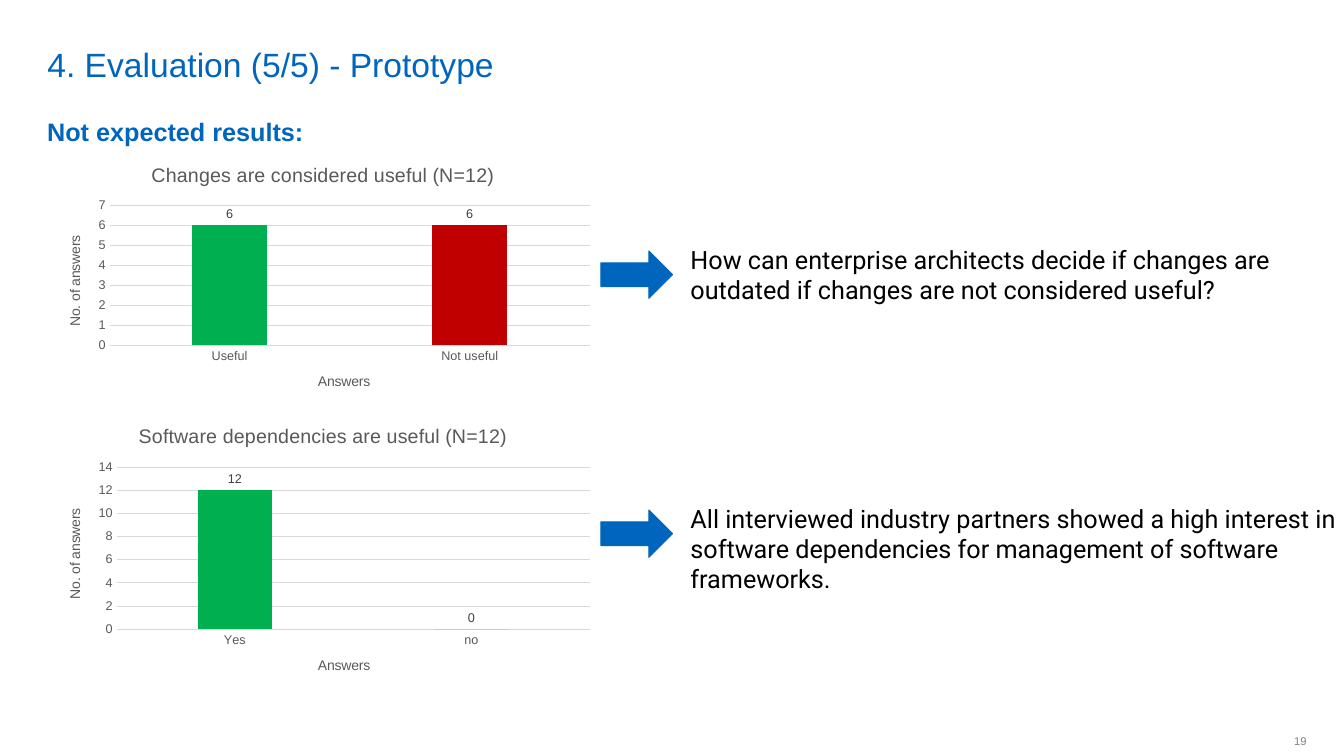
import pptx
import pptx.chart.data
import pptx.dml.color
import pptx.enum.chart
import pptx.enum.shapes
import pptx.enum.text
import pptx.util

Inches = pptx.util.Inches
Pt = pptx.util.Pt
ANCHOR = pptx.enum.text.MSO_ANCHOR
ALIGN = pptx.enum.text.PP_ALIGN
COLORS = {"blue": "0065BD", "green": "00B050", "red": "C00000", "black": "000000",
          "number": "808080", "axis": "595959", "label": "404040", "grid": "D9D9D9"}
rgb = {name: pptx.dml.color.RGBColor.from_string(c) for name, c in COLORS.items()}


def style(font, size, color, name="Arial", bold=False):
    font.size, font.name, font.bold = Pt(size), name, bold
    font.color.rgb = rgb[color]


def write(sp, box, text, size, color, name="Arial", bold=False):
    """Place a text shape and give it one formatted run; return its frame."""
    sp.left, sp.top, sp.width, sp.height = map(Inches, box)
    tf = sp.text_frame
    tf.word_wrap = True
    tf.auto_size = pptx.enum.text.MSO_AUTO_SIZE.NONE
    p = tf.paragraphs[0]
    p.alignment = ALIGN.LEFT
    r = p.add_run()
    r.text = text
    style(r.font, size, color, name, bold)
    return tf


prs = pptx.Presentation()
prs.slide_width, prs.slide_height = Inches(13.33), Inches(7.5)
s = prs.slides.add_slide(prs.slide_layouts[5])

tf = write(s.shapes.title, (0.37, 0.05, 11.58, 0.79),
           "4. Evaluation (5/5) - Prototype", 24, "blue")
tf.vertical_anchor = ANCHOR.BOTTOM
tf.margin_top = tf.margin_bottom = 0

subtitle = s.shapes.add_textbox(0, 0, 0, 0)
write(subtitle, (0.37, 1.1, 5.04, 0.39), "Not expected results:", 18, "blue", bold=True)

page_number = s.shapes.add_textbox(0, 0, 0, 0)
tf = write(page_number, (12.6, 7.19, 0.36, 0.32), "19", 8, "number")
tf.vertical_anchor = ANCHOR.MIDDLE
tf.margin_right = 0
tf.paragraphs[0].alignment = ALIGN.RIGHT

# chart top, chart height, title, answers, bar colours, arrow top, conclusion, its height
findings = [
    (1.47, 2.6, "Changes are considered useful (N=12)",
     {"Useful": 6, "Not useful": 6}, ("green", "red"), 2.49,
     "How can enterprise architects decide if changes are outdated "
     "if changes are not considered useful?", 0.71),
    (4.06, 2.83, "Software dependencies are useful (N=12)",
     {"Yes": 12, "no": 0}, ("green", "green"), 5.06,
     "All interviewed industry partners showed a high interest in software "
     "dependencies for management of software frameworks.", 1.01),
]

for top, height, title, answers, bars, arrow_top, conclusion, text_height in findings:
    data = pptx.chart.data.CategoryChartData()
    data.categories = list(answers)
    data.add_series("Series 1", list(answers.values()))
    chart = s.shapes.add_chart(
        pptx.enum.chart.XL_CHART_TYPE.COLUMN_CLUSTERED,
        Inches(0.45), Inches(top), Inches(5.51), Inches(height), data).chart
    style(chart.font, 10, "black")
    chart.has_legend = False

    cat_axis, val_axis = chart.category_axis, chart.value_axis
    for owner, text, size in ((chart, title, 14), (cat_axis, "Answers", 10),
                              (val_axis, "No. of answers", 10)):
        owner.has_title = True
        heading = owner.chart_title if owner is chart else owner.axis_title
        r = heading.text_frame.paragraphs[0].add_run()
        r.text = text
        style(r.font, size, "axis")
    for axis in (cat_axis, val_axis):
        axis.major_tick_mark = axis.minor_tick_mark = pptx.enum.chart.XL_TICK_MARK.NONE
        style(axis.tick_labels.font, 9, "axis")
    val_axis.has_major_gridlines = True
    for line in (cat_axis.format.line, val_axis.major_gridlines.format.line):
        line.color.rgb = rgb["grid"]
        line.width = Pt(0.75)
    val_axis.format.line.fill.background()

    plot = chart.plots[0]
    plot.gap_width, plot.overlap = 219, -27
    plot.vary_by_categories = False
    series = plot.series[0]
    series.format.fill.solid()
    series.format.fill.fore_color.rgb = rgb["green"]
    for i, color in enumerate(bars):
        if color != "green":
            fill = series.points[i].format.fill
            fill.solid()
            fill.fore_color.rgb = rgb[color]
    labels = series.data_labels
    labels.show_value = True
    labels.position = pptx.enum.chart.XL_LABEL_POSITION.OUTSIDE_END
    style(labels.font, 9, "label")

    arrow = s.shapes.add_shape(pptx.enum.shapes.MSO_SHAPE.RIGHT_ARROW, Inches(5.96),
                               Inches(arrow_top), Inches(0.71), Inches(0.47))
    arrow.shadow.inherit = False
    arrow.fill.solid()
    arrow.fill.fore_color.rgb = arrow.line.color.rgb = rgb["blue"]
    arrow.line.width = Pt(0.75)

    write(s.shapes.add_textbox(0, 0, 0, 0), (6.75, arrow_top - 0.12, 6.67, text_height),
          conclusion, 18, "black", "Roboto")

prs.save("out.pptx")
